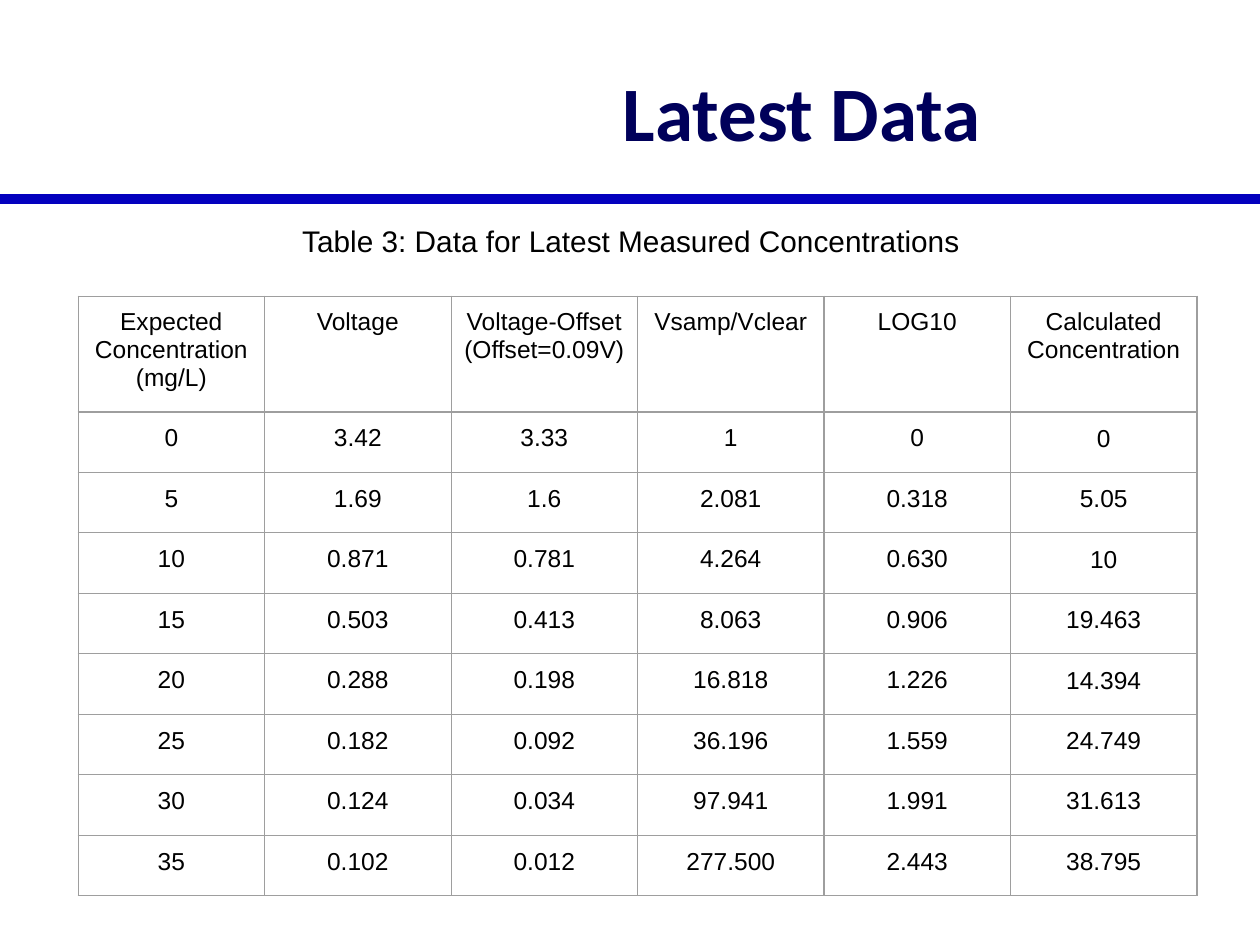
from lxml import etree
from pptx import Presentation
from pptx.dml.color import RGBColor
from pptx.enum.shapes import MSO_CONNECTOR
from pptx.enum.text import MSO_ANCHOR, PP_ALIGN
from pptx.oxml.ns import qn
from pptx.util import Inches, Pt

STRAIGHT = MSO_CONNECTOR.STRAIGHT
CENTER = PP_ALIGN.CENTER
TOP, MIDDLE = MSO_ANCHOR.TOP, MSO_ANCHOR.MIDDLE

HEADERS = ["Expected Concentration (mg/L)", "Voltage",
           "Voltage-Offset (Offset=0.09V)", "Vsamp/Vclear", "LOG10",
           "Calculated Concentration"]
MEASUREMENTS = [
    ["0", "3.42", "3.33", "1", "0", "0"],
    ["5", "1.69", "1.6", "2.081", "0.318", "5.05"],
    ["10", "0.871", "0.781", "4.264", "0.630", "10"],
    ["15", "0.503", "0.413", "8.063", "0.906", "19.463"],
    ["20", "0.288", "0.198", "16.818", "1.226", "14.394"],
    ["25", "0.182", "0.092", "36.196", "1.559", "24.749"],
    ["30", "0.124", "0.034", "97.941", "1.991", "31.613"],
    ["35", "0.102", "0.012", "277.500", "2.443", "38.795"],
]


def rgb(value):
    return RGBColor.from_string(value)


class SlideBuilder:
    NAVY, BLUE, BLACK, GRAY = "00005A", "0300BE", "000000", "9E9E9E"
    HEADING_FONT, BODY_FONT = "Calibri", "Arial"
    BORDER = Pt(0.75)

    def __init__(self, slide):
        self.slide = slide

    def style(self, p, size, color, font, bold=False):
        p.alignment = CENTER
        p.font.name = font
        p.font.size = Pt(size)
        p.font.bold = bold
        p.font.color.rgb = rgb(color)

    def set_margins(self, box, inset):
        box.margin_left = box.margin_right = Inches(inset)
        box.margin_top = box.margin_bottom = Inches(inset)

    def rule(self, x1, y1, x2, y2, color, width):
        line = self.slide.shapes.add_connector(
            STRAIGHT, Inches(x1), Inches(y1), Inches(x2), Inches(y2))
        line.line.color.rgb = rgb(color)
        line.line.width = Pt(width)
        etree.SubElement(line._element.spPr, qn("a:effectLst"))

    def text(self, text, x, y, w, h, size, color, font, bold=False, anchor=TOP):
        sp = self.slide.shapes.add_textbox(
            Inches(x), Inches(y), Inches(w), Inches(h))
        tf = sp.text_frame
        tf.word_wrap = True
        tf.vertical_anchor = anchor
        self.set_margins(tf, 0.1)
        tf.text = text
        self.style(tf.paragraphs[0], size, color, font, bold)

    def borders(self, cell):
        tc_pr = cell._tc.get_or_add_tcPr()
        for side in ("a:lnL", "a:lnR", "a:lnT", "a:lnB"):
            ln = etree.SubElement(tc_pr, qn(side), w=str(self.BORDER))
            fill = etree.SubElement(ln, qn("a:solidFill"))
            etree.SubElement(fill, qn("a:srgbClr"), val=self.GRAY)

    def table(self, rows, x, y, col_width, header_height, row_height):
        n_rows, n_cols = len(rows), len(rows[0])
        height = header_height + (n_rows - 1) * row_height
        table = self.slide.shapes.add_table(
            n_rows, n_cols, Inches(x), Inches(y),
            Inches(n_cols * col_width), Inches(height)).table
        table.first_row = table.horz_banding = False
        for column in table.columns:
            column.width = Inches(col_width)
        for i, values in enumerate(rows):
            table.rows[i].height = Inches(row_height if i else header_height)
            for j, value in enumerate(values):
                cell = table.cell(i, j)
                cell.text = value
                p = cell.text_frame.paragraphs[0]
                self.style(p, 14, self.BLACK, self.BODY_FONT)
                # Calculated values sit in tighter cells with looser lines
                calculated = i > 0 and j == n_cols - 1
                self.set_margins(cell, 0.07 if calculated else 0.1)
                if calculated:
                    p.line_spacing = 1.15
                self.borders(cell)
                cell.fill.background()


def main():
    prs = Presentation()
    prs.slide_width, prs.slide_height = Inches(10), Inches(7.5)
    s = SlideBuilder(prs.slides.add_slide(prs.slide_layouts[6]))

    # Title and divider
    s.rule(0, 1.58, 10, 1.58, s.BLUE, 6)
    s.text("Latest Data", 2.98, 0.25, 6.77, 1.25, 44, s.NAVY,
           s.HEADING_FONT, bold=True, anchor=MIDDLE)

    # Data table and caption
    s.table([HEADERS] + MEASUREMENTS, 0.62, 2.35, 1.48, 0.92, 0.48)
    s.text("Table 3: Data for Latest Measured Concentrations",
           0.83, 1.67, 8.36, 0.5, 17, s.BLACK, s.BODY_FONT)

    prs.save("out.pptx")


if __name__ == "__main__":
    main()
